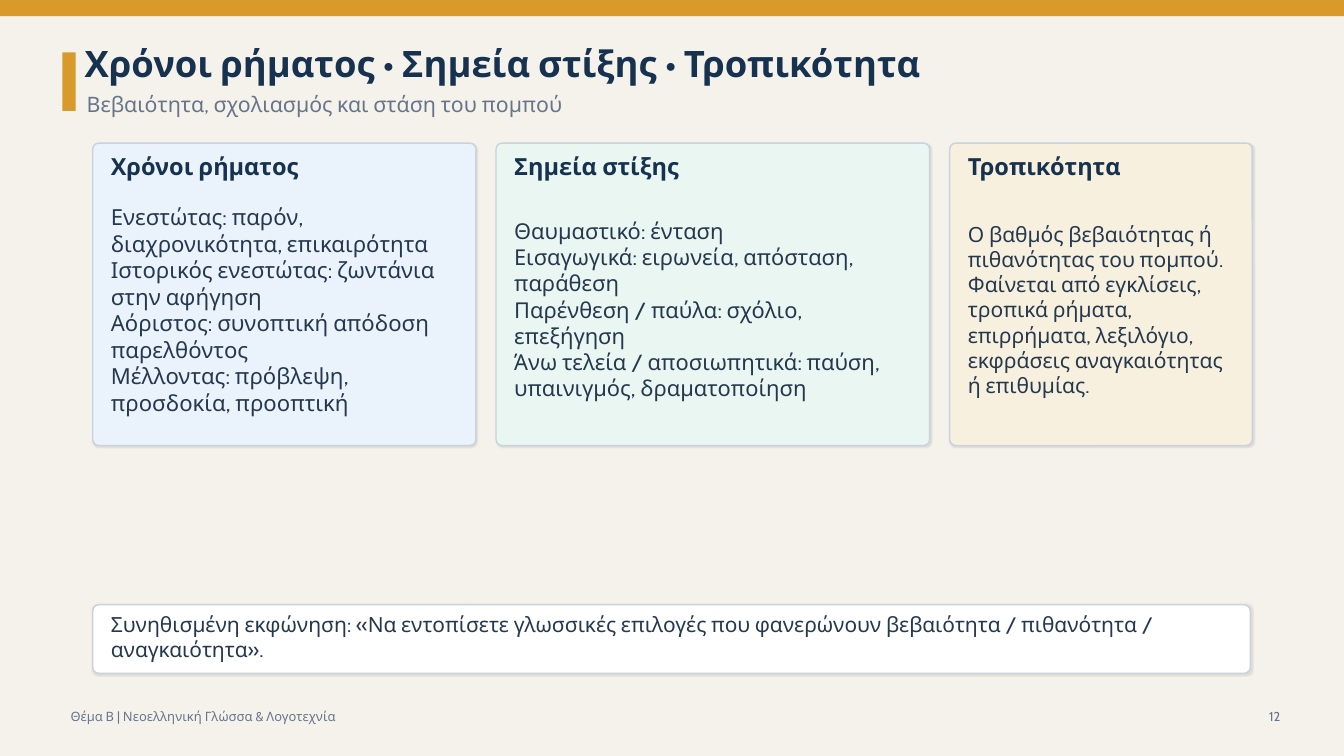
from lxml import etree
from pptx import Presentation
from pptx.dml.color import RGBColor
from pptx.enum.shapes import MSO_SHAPE
from pptx.enum.text import MSO_ANCHOR, PP_ALIGN
from pptx.oxml.ns import qn
from pptx.util import Emu, Pt

PX = 9144  # EMU per px, 100 px to the inch
FONT = "Cabin"
COLORS = {
    "background": "F5F2EC",
    "accent": "D89A2B",
    "heading": "16324F",
    "body": "24384E",
    "muted": "66758A",
    "border": "C9D3DF",
    "blue": "EAF2FB",
    "green": "EAF6F1",
    "cream": "F7F0DE",
    "white": "FFFFFF",
    "shadow": "000000",
}
CARD_LEFT, CARD_TOP, CARD_HEIGHT, CARD_GAP = 92, 142, 300, 20
PADDING, CORNER = 18, 6

# width, fill, heading, body size, body lines
CARDS = [
    (380, "blue", "Χρόνοι ρήματος", 15.8, [
        "Ενεστώτας: παρόν, διαχρονικότητα, επικαιρότητα",
        "Ιστορικός ενεστώτας: ζωντάνια στην αφήγηση",
        "Αόριστος: συνοπτική απόδοση παρελθόντος",
        "Μέλλοντας: πρόβλεψη, προσδοκία, προοπτική",
    ]),
    (430, "green", "Σημεία στίξης", 15.6, [
        "Θαυμαστικό: ένταση",
        "Εισαγωγικά: ειρωνεία, απόσταση, παράθεση",
        "Παρένθεση / παύλα: σχόλιο, επεξήγηση",
        "Άνω τελεία / αποσιωπητικά: παύση, υπαινιγμός, δραματοποίηση",
    ]),
    (300, "cream", "Τροπικότητα", 15, [
        "Ο βαθμός βεβαιότητας ή πιθανότητας του πομπού.",
        "Φαίνεται από εγκλίσεις, τροπικά ρήματα, επιρρήματα, λεξιλόγιο, "
        "εκφράσεις αναγκαιότητας ή επιθυμίας.",
    ]),
]


def rgb(name):
    return RGBColor.from_string(COLORS[name])


def px(*lengths):
    return [Emu(n * PX) for n in lengths]


def add_block(slide, x, y, w, h, fill, kind=MSO_SHAPE.RECTANGLE):
    sp = slide.shapes.add_shape(kind, *px(x, y, w, h))
    sp.shadow.inherit = False
    sp.fill.solid()
    sp.fill.fore_color.rgb = rgb(fill)
    sp.line.fill.background()
    return sp


def add_soft_shadow(sp):
    effects = sp._element.spPr.find(qn("a:effectLst"))
    shadow = etree.SubElement(effects, qn("a:outerShdw"), blurRad=str(Pt(1.2)),
                              dist=str(Pt(0.5)), dir=str(45 * 60000),
                              algn="ctr", rotWithShape="0")
    color = etree.SubElement(shadow, qn("a:srgbClr"), val=COLORS["shadow"])
    etree.SubElement(color, qn("a:alpha"), val="10000")


def add_panel(slide, x, y, w, h, fill):
    sp = add_block(slide, x, y, w, h, fill, MSO_SHAPE.ROUNDED_RECTANGLE)
    sp.adjustments[0] = CORNER / min(w, h)
    sp.line.color.rgb = rgb("border")
    sp.line.width = Pt(1)
    add_soft_shadow(sp)


def add_text(slide, x, y, w, h, lines, size, color, bold=False, align=PP_ALIGN.LEFT):
    tf = slide.shapes.add_textbox(*px(x, y, w, h)).text_frame
    tf.word_wrap = True
    tf.vertical_anchor = MSO_ANCHOR.MIDDLE
    tf.margin_left = tf.margin_right = tf.margin_top = tf.margin_bottom = 0
    tf.text = "\n".join(lines)
    for p in tf.paragraphs:
        p.alignment = align
        for r in p.runs:
            r.font.name = FONT
            r.font.size = Pt(size)
            r.font.bold = bold
            r.font.color.rgb = rgb(color)


def add_card(slide, x, w, fill, heading, size, lines):
    add_panel(slide, x, CARD_TOP, w, CARD_HEIGHT, fill)
    text_x, text_w = x + PADDING, w - 2 * PADDING
    add_text(slide, text_x, CARD_TOP + 12, text_w, 22, [heading], 16.8, "heading", bold=True)
    add_text(slide, text_x, CARD_TOP + 42, text_w, 246, lines, size, "body")


def main():
    prs = Presentation()
    prs.slide_width, prs.slide_height = px(1333, 750)
    slide = prs.slides.add_slide(prs.slide_layouts[6])
    slide.background.fill.solid()
    slide.background.fill.fore_color.rgb = rgb("background")

    # Header
    add_block(slide, 0, 0, 1333, 16, "accent")
    add_block(slide, 62, 52, 13, 58, "accent")
    add_text(slide, 84, 42, 960, 40, ["Χρόνοι ρήματος • Σημεία στίξης • Τροπικότητα"],
             26, "heading", bold=True)
    add_text(slide, 86, 92, 1080, 22, ["Βεβαιότητα, σχολιασμός και στάση του πομπού"],
             15.2, "muted")

    # Footer
    add_text(slide, 70, 701, 490, 20, ["Θέμα Β | Νεοελληνική Γλώσσα & Λογοτεχνία"], 9.2, "muted")
    add_text(slide, 1230, 701, 40, 20, ["12"], 9.2, "muted", align=PP_ALIGN.RIGHT)

    # Cards
    x = CARD_LEFT
    for width, fill, heading, size, lines in CARDS:
        add_card(slide, x, width, fill, heading, size, lines)
        x += width + CARD_GAP

    # Typical exam question
    add_panel(slide, CARD_LEFT, 600, 1148, 68, "white")
    add_text(slide, CARD_LEFT + PADDING, 608, 1112, 48,
             ["Συνηθισμένη εκφώνηση: «Να εντοπίσετε γλωσσικές επιλογές που φανερώνουν "
              "βεβαιότητα / πιθανότητα / αναγκαιότητα»."], 14.9, "body")

    prs.save("out.pptx")


if __name__ == "__main__":
    main()
